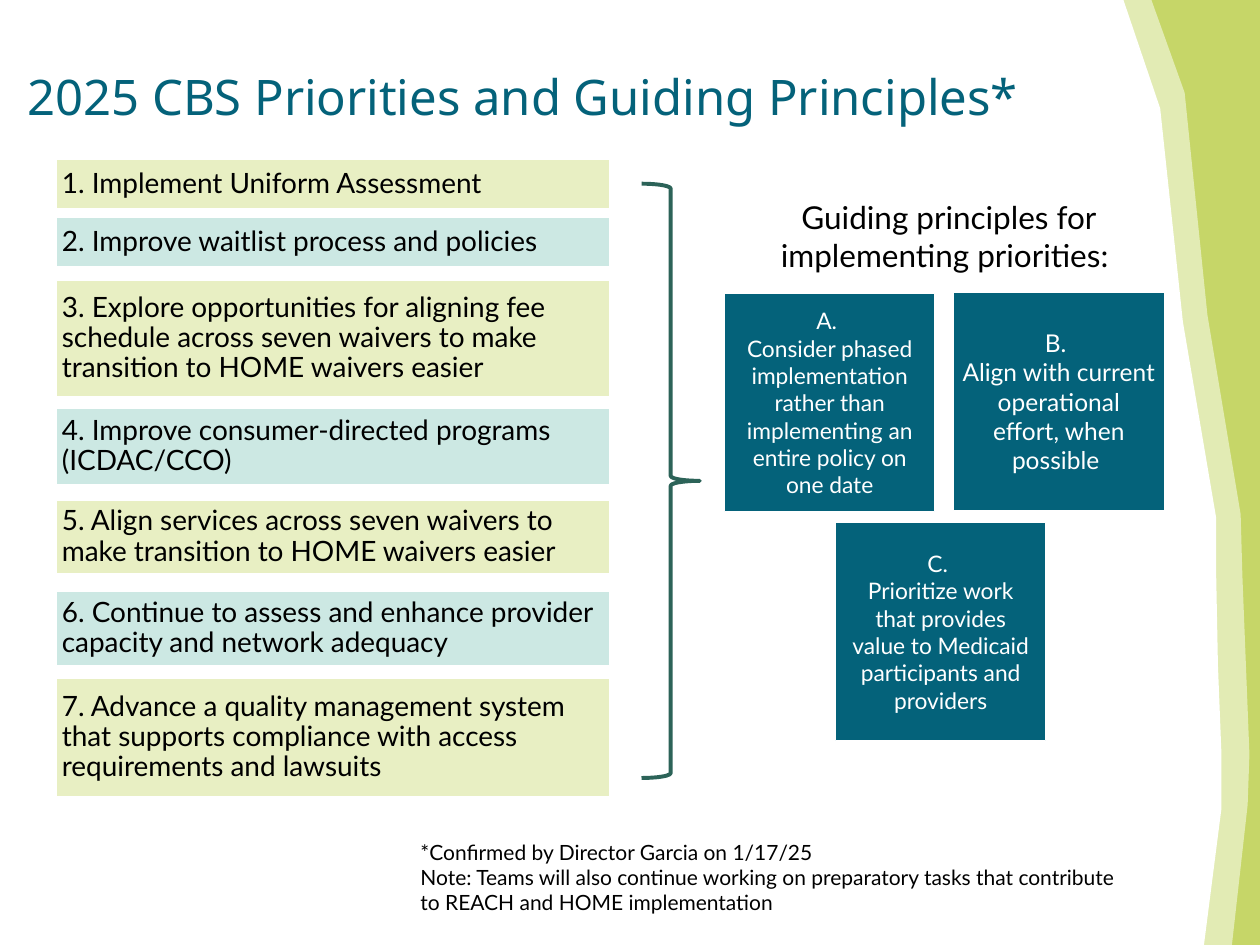
"""Build the 2025 CBS priorities and guiding principles slide."""
from dataclasses import dataclass

from pptx import Presentation
from pptx import util as u
from pptx.dml import color
from pptx.enum import shapes, text
from pptx.oxml import ns

GREEN, BAND, WHITE, BLACK = "C6D668", "E2EBB4", "FFFFFF", "000000"
TEAL, LIME, MINT, BRACE = "04627A", "E8EFC3", "CCE8E3", "2C6358"
LEFT, CENTER = text.PP_ALIGN.LEFT, text.PP_ALIGN.CENTER
TOP, MIDDLE = text.MSO_ANCHOR.TOP, text.MSO_ANCHOR.MIDDLE
EDGE = [(641.5, 0), (663, 62), (676, 184), (695, 296), (695, 329),
        (696.5, 380), (698, 431), (697.7, 461.5), (688.5, 540)]
BAND_EDGE = [(658, 0), (677, 53), (690, 180), (709.3, 294), (709.5, 329),
             (711.5, 380), (713.5, 431), (713, 460), (704.5, 540)]


@dataclass
class Box:
    x: float
    y: float
    w: float
    h: float


@dataclass
class Style:
    size: float
    color: str = BLACK
    font: str = "Lato"
    align: int = LEFT
    anchor: int = TOP
    inset: tuple = (7.2, 3.6)
    spacing: float = 1.0


@dataclass
class Priority:
    top: float
    height: float
    label: str


@dataclass
class Principle:
    x: float
    y: float
    letter: str
    label: str
    size: float
    inset: tuple = (7.2, 3.6)


PRIORITIES = [
    Priority(90.9, 28.6, "1. Implement Uniform Assessment"),
    Priority(124, 28.6, "2. Improve waitlist process and policies"),
    Priority(159.7, 67.5, "3. Explore opportunities for aligning fee schedule across "
             "seven waivers to make transition to HOME waivers easier"),
    Priority(233.2, 43.9, "4. Improve consumer-directed programs (ICDAC/CCO)"),
    Priority(285.3, 43.1, "5. Align services across seven waivers to make transition "
             "to HOME waivers easier"),
    Priority(337.6, 43.1, "6. Continue to assess and enhance provider capacity and "
             "network adequacy"),
    Priority(387.5, 68, "7. Advance a quality management system that supports "
             "compliance with access requirements and lawsuits"),
]
PRINCIPLES = [
    Principle(414, 167.8, "A. ", "Consider phased implementation rather than "
              "implementing an entire policy on one date", 13),
    Principle(545, 167, "B. ", "Align with current operational effort, when possible ",
              14, (5, 2.9)),
    Principle(477.4, 298.8, "C. ", "Prioritize work that provides value to Medicaid "
              "participants and providers", 13),
]


def rgb(value: str) -> color.RGBColor:
    """Turn a hex string into a colour."""
    return color.RGBColor.from_string(value)


def place(box: Box) -> list:
    """Give the position and size of a box as lengths."""
    return [u.Pt(v) for v in (box.x, box.y, box.w, box.h)]


def write(tf, lines: list[str], style: Style) -> None:
    """Fill a text frame with one paragraph per line."""
    tf.word_wrap = True
    tf.vertical_anchor = style.anchor
    tf.margin_left = tf.margin_right = u.Pt(style.inset[0])
    tf.margin_top = tf.margin_bottom = u.Pt(style.inset[1])
    for i, line in enumerate(lines):
        p = tf.add_paragraph() if i else tf.paragraphs[0]
        p.add_run().text = line
        p.alignment = style.align
        p.line_spacing = style.spacing
        p.font.size = u.Pt(style.size)
        p.font.name = style.font
        p.font.color.rgb = rgb(style.color)


def add_text(s, box: Box, lines: list[str], style: Style) -> None:
    """Add a text box."""
    write(s.shapes.add_textbox(*place(box)).text_frame, lines, style)


def add_tile(s, box: Box, fill: str, line_width: float, lines: list[str],
             style: Style) -> None:
    """Add a filled rectangle with a white border and text."""
    sp = s.shapes.add_shape(shapes.MSO_SHAPE.RECTANGLE, *place(box))
    sp.shadow.inherit = False
    sp.fill.solid()
    sp.fill.fore_color.rgb = rgb(fill)
    sp.line.color.rgb = rgb(WHITE)
    sp.line.width = u.Pt(line_width)
    write(sp.text_frame, lines, style)


def add_panel(s, edge: list[tuple[float, float]], fill: str) -> None:
    """Add a panel reaching from the left side of the slide to an edge."""
    fb = s.shapes.build_freeform(0, 0, scale=u.Pt(1))
    fb.add_line_segments(edge + [(0, 540)])
    sp = fb.convert_to_shape()
    sp.shadow.inherit = False
    sp.fill.solid()
    sp.fill.fore_color.rgb = rgb(fill)
    sp.line.fill.background()


def add_brace(s, box: Box) -> None:
    """Add the brace that joins priorities to principles."""
    sp = s.shapes.add_shape(shapes.MSO_SHAPE.RIGHT_BRACE, *place(box))
    sp.shadow.inherit = False
    sp.fill.background()
    sp.line.color.rgb = rgb(BRACE)
    sp.line.width = u.Pt(2.25)


def main() -> None:
    """Build and save the slide."""
    prs = Presentation()
    prs.slide_width, prs.slide_height = u.Pt(720), u.Pt(540)
    s = prs.slides.add_slide(prs.slide_layouts[6])
    s.background.fill.solid()
    s.background.fill.fore_color.rgb = rgb(GREEN)
    add_panel(s, BAND_EDGE, BAND)
    add_panel(s, EDGE, WHITE)

    add_text(s, Box(8.6, 5, 620.6, 104.4), ["2025 CBS Priorities and Guiding Principles*"],
             Style(28, TEAL, "Noto Sans", anchor=MIDDLE, spacing=0.9))
    for i, item in enumerate(PRIORITIES):
        add_tile(s, Box(31.8, item.top, 317.2, item.height), (LIME, MINT)[i % 2], 1.5,
                 [item.label], Style(16, anchor=MIDDLE, inset=(3.6, 3.6), spacing=0.9))
    add_brace(s, Box(366.6, 105, 33.3, 339.6))
    add_text(s, Box(233.2, 476, 414.7, 51), [
        "*Confirmed by Director Garcia on 1/17/25",
        "Note: Teams will also continue working on preparatory tasks that contribute "
        "to REACH and HOME implementation"], Style(12))
    add_text(s, Box(414.7, 110.2, 254.9, 49),
             ["Guiding principles for implementing priorities: "],
             Style(18, align=CENTER, inset=(5, 2.9)))
    for item in PRINCIPLES:
        add_tile(s, Box(item.x, item.y, 120.2, 124.6), TEAL, 0.5,
                 [item.letter, item.label],
                 Style(item.size, WHITE, align=CENTER, anchor=MIDDLE, inset=item.inset))
    prs.save("out.pptx")


if __name__ == "__main__":
    main()
